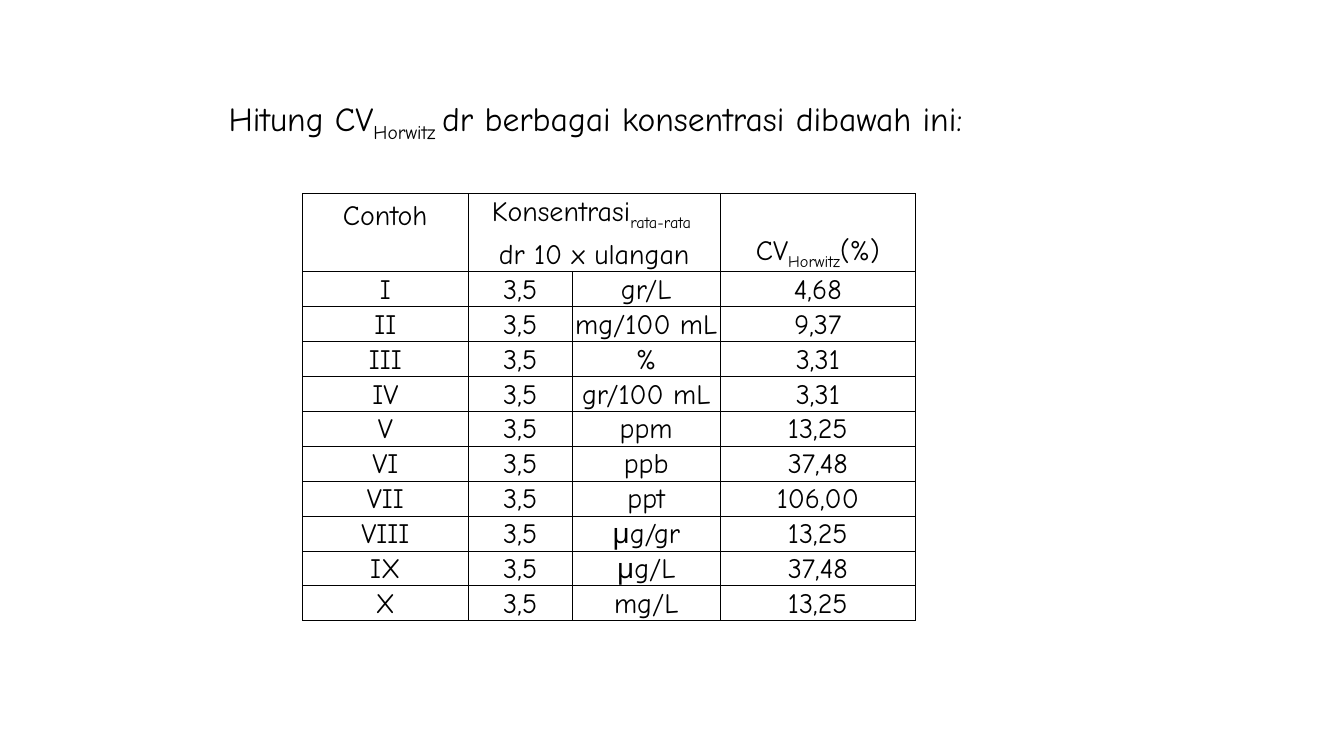
from dataclasses import dataclass

from lxml import etree
from pptx import Presentation
from pptx import util as u
from pptx.dml.color import RGBColor
from pptx.enum import text
from pptx.oxml.ns import qn


@dataclass(frozen=True)
class Theme:
    font: str = "Comic Neue"
    ink: str = "000000"
    head: int = 24
    body: int = 20
    line: float = 0.5
    sub: int = -25000


class Page:
    def __init__(self, deck, theme):
        self.slide = deck.slides.add_slide(deck.slide_layouts[6])
        self.theme = theme

    def label(self, para, words, size):
        """Put words into para; parts between underscores become subscripts."""
        for i, part in enumerate(words.split("_")):
            if not part:
                continue
            run = para.add_run()
            run.text = part
            run.font.name = self.theme.font
            run.font.size = u.Pt(size)
            run.font.color.rgb = RGBColor.from_string(self.theme.ink)
            if i % 2:
                run.font._element.set("baseline", str(self.theme.sub))

    def title(self, words, left, top, width, height, hang):
        box = self.slide.shapes.add_textbox(
            u.Cm(left), u.Cm(top), u.Cm(width), u.Cm(height))
        frame = box.text_frame
        frame.word_wrap = True
        frame.auto_size = text.MSO_AUTO_SIZE.SHAPE_TO_FIT_TEXT
        para = frame.paragraphs[0]
        props = para._p.get_or_add_pPr()
        props.set("marL", str(int(u.Cm(hang))))
        props.set("indent", str(-int(u.Cm(hang))))
        self.label(para, words, self.theme.head)

    def edge(self, cell, hide):
        """Rule all four sides of a cell except the hidden one."""
        props = cell._tc.get_or_add_tcPr()
        for i, side in enumerate("LRTB"):
            width = str(int(u.Pt(self.theme.line)))
            line = etree.Element(qn("a:ln" + side), w=width)
            if side == hide:
                etree.SubElement(line, qn("a:noFill"))
            else:
                fill = etree.SubElement(line, qn("a:solidFill"))
                etree.SubElement(fill, qn("a:srgbClr"), val=self.theme.ink)
            props.insert(i, line)

    def table(self, rows, left, top, widths, heights):
        """Draw rows; the first two form one header with a joined middle."""
        grid = self.slide.shapes.add_table(
            len(rows), len(widths), u.Cm(left), u.Cm(top),
            u.Cm(sum(widths)), u.Cm(sum(heights))).table
        grid.first_row = grid.horz_banding = False
        for col, width in zip(grid.columns, widths):
            col.width = u.Cm(width)
        for r, (row, height) in enumerate(zip(rows, heights)):
            grid.rows[r].height = u.Cm(height)
            for c, words in enumerate(row):
                cell = grid.cell(r, c)
                cell.fill.background()
                cell.vertical_anchor = text.MSO_ANCHOR.BOTTOM
                cell.margin_left = cell.margin_right = cell.margin_top = u.Cm(0.03)
                cell.margin_bottom = 0
                para = cell.text_frame.paragraphs[0]
                para.alignment = text.PP_ALIGN.CENTER
                self.label(para, words, self.theme.body)
                self.edge(cell, {0: "B", 1: "T"}.get(r))
        for r in range(2):
            grid.cell(r, 1).merge(grid.cell(r, 2))


HEADER = [
    ("Contoh", "Konsentrasi_rata-rata _", "", ""),
    ("", "dr 10 x ulangan", "", "CV_Horwitz_(%)"),
]
SAMPLES = [
    ("I", "gr/L", "4,68"),
    ("II", "mg/100 mL", "9,37"),
    ("III", "%", "3,31"),
    ("IV", "gr/100 mL", "3,31"),
    ("V", "ppm", "13,25"),
    ("VI", "ppb", "37,48"),
    ("VII", "ppt", "106,00"),
    ("VIII", "μg/gr", "13,25"),
    ("IX", "μg/L", "37,48"),
    ("X", "mg/L", "13,25"),
]


def main():
    deck = Presentation()
    deck.slide_width, deck.slide_height = u.Cm(33.87), u.Cm(19.05)
    page = Page(deck, Theme())
    rows = HEADER + [(name, "3,5", unit, cv) for name, unit, cv in SAMPLES]
    heights = [0.98] * len(HEADER) + [0.88] * len(SAMPLES)
    page.table(rows, 7.62, 4.88, [4.18, 2.62, 3.73, 4.92], heights)
    page.title("Hitung CV_Horwitz _dr berbagai konsentrasi dibawah ini:",
               5.51, 2.34, 22.66, 1.27, 1.42)
    deck.save("out.pptx")


if __name__ == "__main__":
    main()
